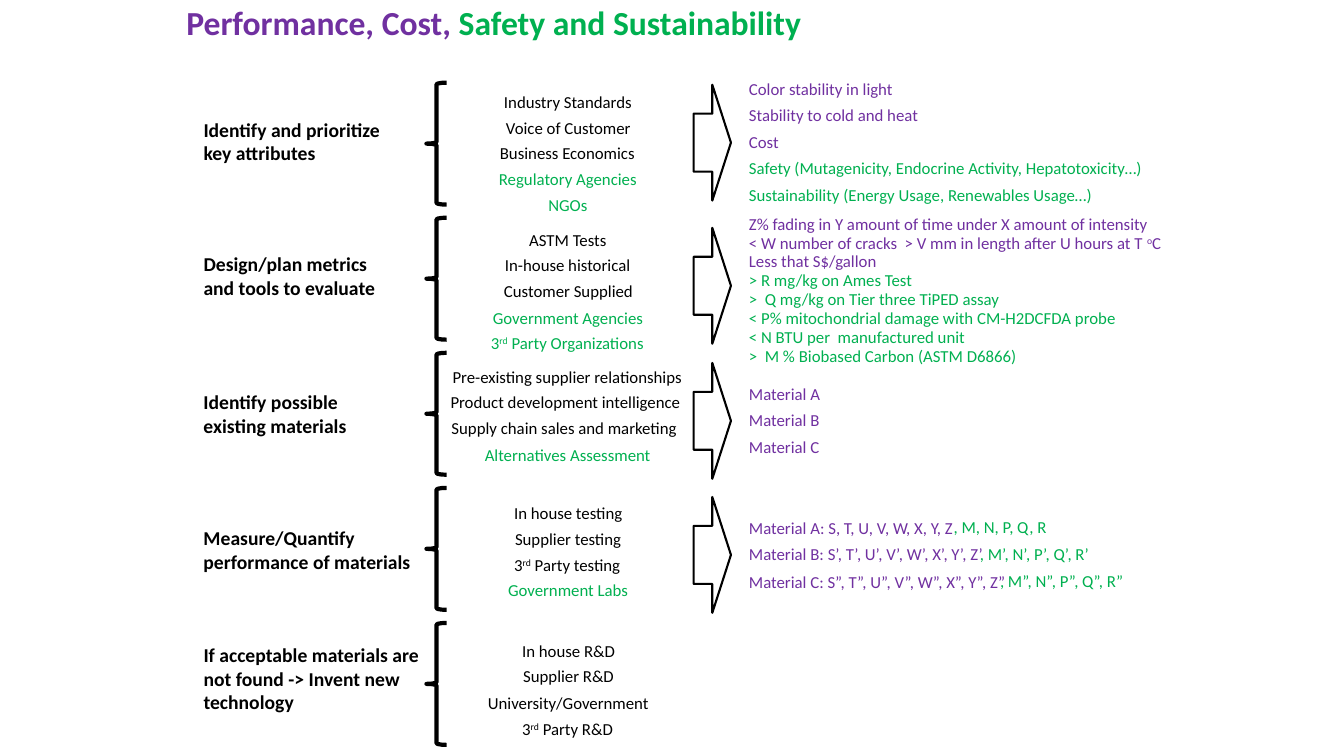
from pptx import Presentation
from pptx import util as u
from pptx.dml.color import RGBColor
from pptx.enum import shapes, text

BLACK = RGBColor(0x00, 0x00, 0x00)
PURPLE = RGBColor(0x70, 0x30, 0xA0)
GREEN = RGBColor(0x00, 0xB0, 0x50)

LABELS = [
    ("Identify and prioritize\nkey attributes", 112, 201, 57),
    ("Design/plan metrics\nand tools to evaluate", 245, 191, 57),
    ("Identify possible\nexisting materials", 382, 163, 57),
    ("Measure/Quantify\nperformance of materials", 517, 227, 57),
    ("If acceptable materials are\nnot found -> Invent new\ntechnology", 633, 239, 81),
]

SOURCES = [
    (86, 3, [("Industry Standards", 148), ("Voice of Customer", 145),
             ("Business Economics", 156), ("Regulatory Agencies", 158),
             ("NGOs", 60)]),
    (223, 3, [("ASTM Tests", 98), ("In-house historical", 146),
              ("Customer Supplied", 149), ("Government Agencies", 171),
              ("3^rd^ Party Organizations", 175)]),
    (359, 3, [("Pre-existing supplier relationships", 250),
              ("Product development intelligence", 254),
              ("Supply chain sales and marketing", 253),
              ("Alternatives Assessment", 187)]),
    (494, 3, [("In house testing", 129), ("Supplier testing", 126),
              ("3^rd^ Party testing", 128), ("Government Labs", 141)]),
    (631, 4, [("In house R&D", 113), ("Supplier R&D", 111),
              ("University/Government", 181), ("3^rd^ Party R&D", 112)]),
]

RESULTS = [
    (73, 26.25, 3, [
        ("Color stability in light", 164),
        ("Stability to cold and heat", 190),
        ("Cost", 50),
        ("Safety (Mutagenicity, Endocrine Activity, Hepatotoxicity…)", 414),
        ("Sustainability (Energy Usage, Renewables Usage…)", 364)]),
    (207, 18.7, 3, [
        ("Z% fading in Y amount of time under X amount of intensity", 420),
        ("< W number of cracks  > V mm in length after U hours at T ^o^C", 434),
        ("Less that S$/gallon", 148),
        ("> R mg/kg on Ames Test", 184),
        (">  Q mg/kg on Tier three TiPED assay", 272),
        ("< P% mitochondrial damage with CM-H2DCFDA probe", 388),
        ("< N BTU per  manufactured unit", 237),
        (">  M % Biobased Carbon (ASTM D6866)", 289)]),
    (376, 26.25, 3, [("Material A", 92), ("Material B", 91), ("Material C", 91)]),
    (509, 26.25, 3, [
        ("Material A: S, T, U, V, W, X, Y, Z", 225),
        ("Material B: S’, T’, U’, V’, W’, X’, Y’, Z’", 255),
        ("Material C: S”, T”, U”, V”, W”, X”, Y”, Z”", 278)]),
]

SAFETY_SCORES = [
    (", M, N, P, Q, R", 936, 508, 118),
    (", M’, N’, P’, Q’, R’", 962, 535, 130),
    (", M”, N”, P”, Q”, R”", 982, 561, 147),
]

ARROW_TOPS = [84, 226, 360, 493]


class Board:
    """Draws styled elements on one slide, with lengths in px."""

    FONT = "Calibri"
    EMU_PER_PX = 9144

    def __init__(self, prs):
        prs.slide_width, prs.slide_height = self.emu(1333, 750)
        self.shapes = prs.slides.add_slide(prs.slide_layouts[6]).shapes

    def emu(self, *lengths):
        return [u.Emu(n * self.EMU_PER_PX) for n in lengths]

    def text(self, runs, x, y, w, h=30, size=12, bold=False):
        sp = self.shapes.add_textbox(*self.emu(x, y, w, h))
        tf = sp.text_frame
        tf.word_wrap = False
        tf.auto_size = text.MSO_AUTO_SIZE.SHAPE_TO_FIT_TEXT
        p = tf.paragraphs[0]
        for content, color in runs:
            for n, line in enumerate(content.split("\n")):
                if n:
                    p = tf.add_paragraph()
                self.runs(p, line, color)
        for p in tf.paragraphs:
            p.font.name, p.font.size, p.font.bold = self.FONT, u.Pt(size), bold

    def runs(self, p, line, color):
        for n, part in enumerate(line.split("^")):
            if part:
                r = p.add_run()
                r.text = part
                r.font.color.rgb = color
                if n % 2:
                    r._r.get_or_add_rPr().set("baseline", "30000")

    def column(self, items, top, pitch, split, color, left=None, center=None):
        for n, (line, w) in enumerate(items):
            x = center - w // 2 if left is None else left
            shade = color if n < split else GREEN
            self.text([(line, shade)], x, round(top + n * pitch), w)

    def outline(self, kind, x, y, w, h, weight):
        sp = self.shapes.add_shape(kind, *self.emu(x, y, w, h))
        sp.shadow.inherit = False
        sp.fill.background()
        sp.line.color.rgb = BLACK
        sp.line.width = u.Pt(weight)


def main():
    prs = Presentation()
    board = Board(prs)
    board.text([("Performance, Cost, ", PURPLE), ("Safety and Sustainability", GREEN)],
               175, -3, 637, 50, size=24, bold=True)
    for label, y, w, h in LABELS:
        board.text([(label, BLACK)], 192, y, w, h, size=14, bold=True)
    for n, (top, split, items) in enumerate(SOURCES):
        board.outline(shapes.MSO_SHAPE.LEFT_BRACE, 423, 82 + 134 * n, 20, 121, 3)
        board.column(items, top, 25.5, split, BLACK, center=564)
    for y in ARROW_TOPS:
        board.outline(shapes.MSO_SHAPE.RIGHT_ARROW, 688, y, 37, 115, 1.5)
    for top, pitch, split, items in RESULTS:
        board.column(items, top, pitch, split, PURPLE, left=733)
    for scores, x, y, w in SAFETY_SCORES:
        board.text([(scores, GREEN)], x, y, w)
    prs.save("out.pptx")


if __name__ == "__main__":
    main()
